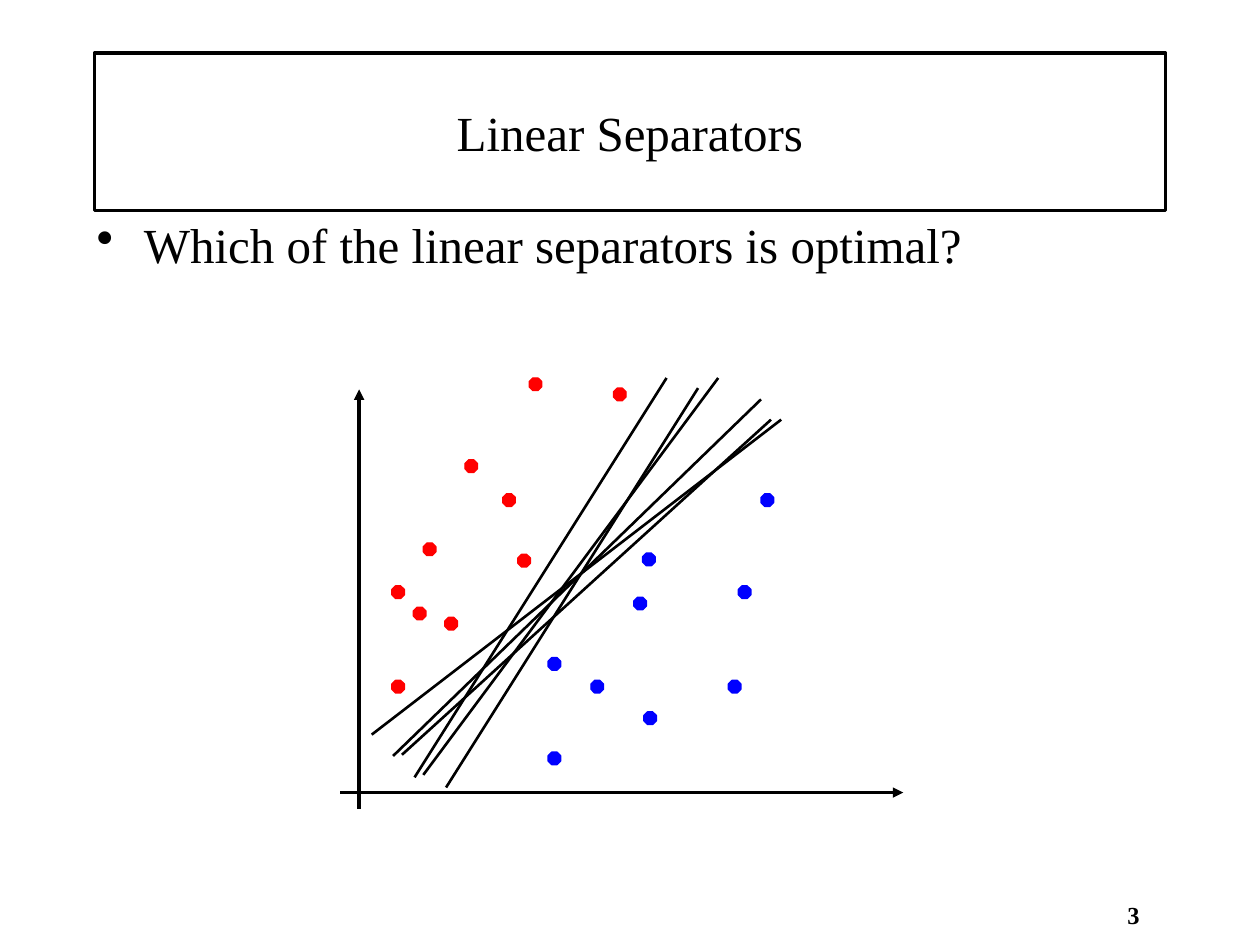
"""Build the slide on linear separators."""
from typing import NamedTuple, Optional

from lxml.etree import SubElement
from pptx import Presentation
from pptx.dml.color import RGBColor
from pptx.enum.shapes import MSO_CONNECTOR, MSO_SHAPE
from pptx.enum.text import MSO_ANCHOR, PP_ALIGN
from pptx.oxml.ns import qn
from pptx.util import Pt

BLACK = RGBColor(0, 0, 0)
WHITE = RGBColor(255, 255, 255)
RED = RGBColor(255, 0, 0)
BLUE = RGBColor(0, 0, 255)
FONT = "Times New Roman"
DOT_SIZE = 7.2


class Label(NamedTuple):
    text: str
    left: float
    top: float
    width: float
    height: float
    size: float
    bold: bool = False
    align: PP_ALIGN = PP_ALIGN.CENTER
    anchor: MSO_ANCHOR = MSO_ANCHOR.TOP
    inset: float = 0
    fill: Optional[RGBColor] = None
    border: float = 0
    bullet_indent: float = 0
    space_before: float = 0


class Line(NamedTuple):
    x1: float
    y1: float
    x2: float
    y2: float
    weight: float = 1.5
    arrow: bool = False


class Dot(NamedTuple):
    left: float
    top: float
    color: RGBColor


LABELS = [
    Label("3", 635.8, 514.1, 23.8, 25.9, 14, bold=True, fill=WHITE),
    Label("Linear Separators", 54, 30.2, 612, 90, 28,
          anchor=MSO_ANCHOR.MIDDLE, inset=3.6, border=2),
    Label("Which of the linear separators is optimal?", 48.2, 118.8, 648, 396, 28,
          align=PP_ALIGN.LEFT, inset=7.2, bullet_indent=27, space_before=5.6),
]

AXES = [
    Line(205.2, 462.2, 205.2, 222.5, 2, True),
    Line(194.4, 452.9, 516.2, 452.9, 2, True),
]

SEPARATORS = [
    Line(229.7, 431.3, 440.6, 239.8),
    Line(241.9, 442.8, 410.4, 216),
    Line(212.4, 419.8, 446.4, 239.8),
    Line(254.9, 450, 398.9, 221.8),
    Line(236.9, 444.2, 380.9, 216),
    Line(224.6, 432, 434.9, 228.2),
]

RED_POINTS = [
    (287.3, 282.2), (241.9, 310.3), (254.2, 352.8), (223.9, 388.8), (265.7, 262.8),
    (223.9, 334.8), (236.2, 347), (295.9, 316.8), (302.4, 216), (350.6, 221.8),
]

BLUE_POINTS = [
    (367.2, 316.1), (337.7, 388.8), (416.2, 388.8), (313.2, 429.8), (362.2, 341.3),
    (313.2, 375.8), (367.9, 406.8), (421.9, 334.8), (434.9, 282.2),
]

DOTS = ([Dot(x, y, RED) for x, y in RED_POINTS]
        + [Dot(x, y, BLUE) for x, y in BLUE_POINTS])


def draw_label(s, label: Label) -> None:
    sp = s.shapes.add_textbox(
        Pt(label.left), Pt(label.top), Pt(label.width), Pt(label.height))
    if label.fill is not None:
        sp.fill.solid()
        sp.fill.fore_color.rgb = label.fill
    if label.border:
        sp.line.color.rgb = BLACK
        sp.line.width = Pt(label.border)
    tf = sp.text_frame
    tf.word_wrap = True
    tf.vertical_anchor = label.anchor
    tf.margin_left = tf.margin_right = Pt(label.inset)
    tf.margin_top = tf.margin_bottom = Pt(label.inset / 2)
    tf.text = label.text
    p = tf.paragraphs[0]
    p.alignment = label.align
    p.space_before = Pt(label.space_before)
    if label.bullet_indent:
        p_pr = p._p.get_or_add_pPr()
        p_pr.set("marL", str(Pt(label.bullet_indent)))
        p_pr.set("indent", str(-Pt(label.bullet_indent)))
        SubElement(p_pr, qn("a:buChar")).set("char", "•")
    r = p.runs[0]
    r.font.name = FONT
    r.font.size = Pt(label.size)
    r.font.bold = label.bold
    r.font.color.rgb = BLACK


def draw_line(s, line: Line) -> None:
    sp = s.shapes.add_connector(
        MSO_CONNECTOR.STRAIGHT, Pt(line.x1), Pt(line.y1), Pt(line.x2), Pt(line.y2))
    sp.line.color.rgb = BLACK
    sp.line.width = Pt(line.weight)
    if line.arrow:
        SubElement(sp.line._get_or_add_ln(), qn("a:tailEnd")).set("type", "triangle")
    SubElement(sp._element.spPr, qn("a:effectLst"))


def draw_dot(s, dot: Dot) -> None:
    sp = s.shapes.add_shape(
        MSO_SHAPE.OCTAGON, Pt(dot.left), Pt(dot.top), Pt(DOT_SIZE), Pt(DOT_SIZE))
    sp.shadow.inherit = False
    sp.fill.solid()
    sp.fill.fore_color.rgb = dot.color
    sp.line.color.rgb = dot.color
    sp.line.width = Pt(0.75)


def main() -> None:
    prs = Presentation()
    prs.slide_width, prs.slide_height = Pt(720), Pt(540)
    s = prs.slides.add_slide(prs.slide_layouts[6])
    for label in LABELS:
        draw_label(s, label)
    for line in AXES:
        draw_line(s, line)
    for dot in DOTS:
        draw_dot(s, dot)
    for line in SEPARATORS:
        draw_line(s, line)
    prs.save("out.pptx")


if __name__ == "__main__":
    main()
